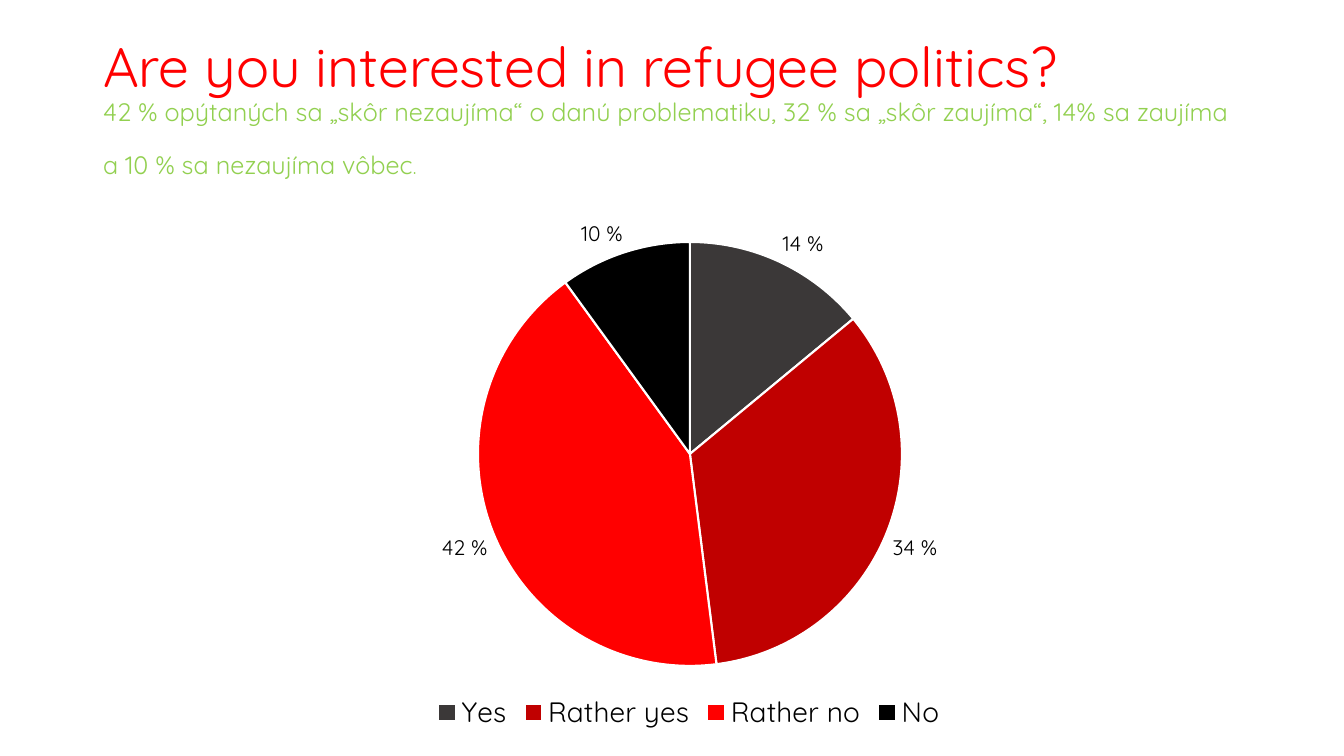
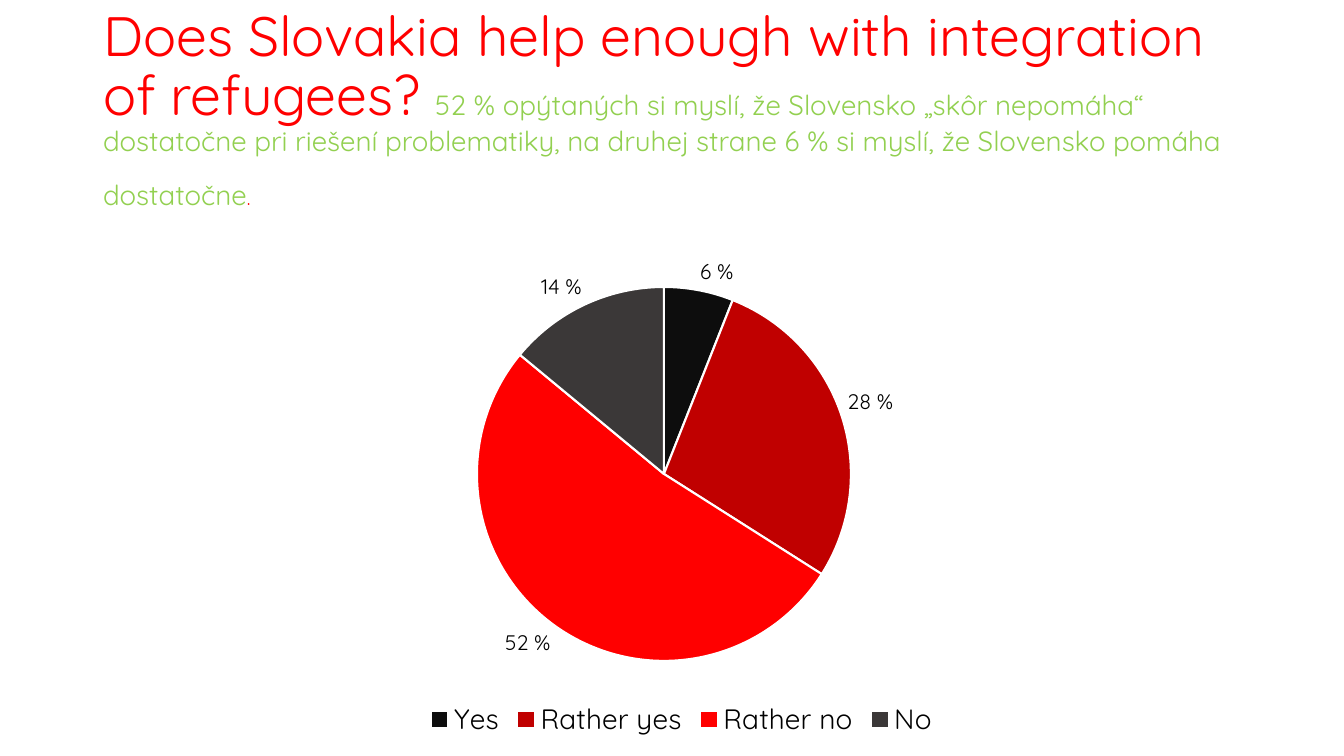
from dataclasses import dataclass

from lxml.etree import SubElement
from pptx import Presentation
from pptx.chart.data import CategoryChartData as ChartData
from pptx.dml.color import RGBColor
from pptx.enum.chart import XL_CHART_TYPE as ChartType
from pptx.enum.chart import XL_LABEL_POSITION as LabelPosition
from pptx.enum.chart import XL_LEGEND_POSITION as LegendPosition
from pptx.enum.text import MSO_ANCHOR as Anchor
from pptx.enum.text import MSO_AUTO_SIZE as AutoSize
from pptx.enum.text import PP_ALIGN as Align
from pptx.oxml.ns import qn
from pptx.util import Pt


@dataclass(frozen=True)
class Theme:
    font: str = "Quicksand"
    base_font: str = "Calibri"
    red: str = "FF0000"
    dark_red: str = "C00000"
    green: str = "92D050"
    gray: str = "3B3838"
    soft_black: str = "0D0D0D"
    black: str = "000000"
    white: str = "FFFFFF"
    question_size: float = 39.6
    stop_size: float = 14.4
    legend_size: int = 20
    label_size: int = 15
    base_size: int = 10
    slice_border: float = 1.5


THEME = Theme()
EMU_PER_PX = 914400 / 100.8
SLIDE_SIZE = (1344, 756)
TITLE_BOX = (93, 40, 1159, 146)
TITLE_ONLY = 5
ANSWERS = ("Yes", "Rather yes", "Rather no", "No")

QUESTIONS = [
    {
        "question": "Are you interested in refugee politics?",
        "break_after": True,
        "summary": "42 % opýtaných sa „skôr nezaujíma“ o danú problematiku, "
                   "32 % sa „skôr zaujíma“, 14% sa zaujíma a 10 % sa nezaujíma vôbec",
        "summary_size": 18,
        "stop_color": THEME.green,
        "values": (14, 34, 42, 10),
        "colors": (THEME.gray, THEME.dark_red, THEME.red, THEME.black),
        "chart_box": (55, 201, 1268, 535),
        "pie_box": (478, 242, 424, 424),
    },
    {
        "question": "Does Slovakia help enough with integration of refugees? ",
        "break_after": False,
        "summary": "52 % opýtaných si myslí, že Slovensko „skôr nepomáha“ "
                   "dostatočne pri riešení problematiky, na druhej strane 6 % si myslí, "
                   "že Slovensko pomáha dostatočne",
        "summary_size": 19.8,
        "stop_color": THEME.red,
        "values": (6, 28, 52, 14),
        "colors": (THEME.soft_black, THEME.dark_red, THEME.red, THEME.gray),
        "chart_box": (40, 242, 1283, 501),
        "pie_box": (477, 287, 374, 374),
    },
]


def emu(*lengths):
    return [round(length * EMU_PER_PX) for length in lengths]


def format_font(font, size, color=THEME.black, name=THEME.font):
    font.size = Pt(size)
    font.name = name
    font.color.rgb = RGBColor.from_string(color)


def add_text(paragraph, text, **style):
    run = paragraph.add_run()
    run.text = text
    format_font(run.font, **style)


def add_line_break(paragraph, size):
    paragraph.add_line_break()
    SubElement(paragraph._p[-1], qn("a:rPr"), sz=str(round(size * 100)))


def fill_title(title, content):
    title.left, title.top, title.width, title.height = emu(*TITLE_BOX)
    frame = title.text_frame
    frame.auto_size = AutoSize.NONE
    frame.word_wrap = True
    frame.vertical_anchor = Anchor.MIDDLE
    paragraph = frame.paragraphs[0]
    paragraph.alignment = Align.LEFT
    paragraph.line_spacing = 0.9
    add_text(paragraph, content["question"], size=THEME.question_size, color=THEME.red)
    if content["break_after"]:
        add_line_break(paragraph, THEME.question_size)
    add_text(paragraph, content["summary"], size=content["summary_size"], color=THEME.green)
    add_text(paragraph, ".", size=THEME.stop_size, color=content["stop_color"])
    add_text(paragraph, " ", size=THEME.question_size, color=content["stop_color"])


def place_pie(chart, chart_box, pie_box):
    left, top, width, height = chart_box
    pie_left, pie_top, pie_width, pie_height = pie_box
    fractions = {
        "x": (pie_left - left) / width,
        "y": (pie_top - top) / height,
        "w": pie_width / width,
        "h": pie_height / height,
    }
    plot_area = chart.element.find(".//" + qn("c:plotArea"))
    for old_layout in plot_area.findall(qn("c:layout")):
        plot_area.remove(old_layout)
    layout = SubElement(plot_area, qn("c:layout"))
    plot_area.insert(0, layout)
    manual = SubElement(layout, qn("c:manualLayout"))
    SubElement(manual, qn("c:layoutTarget"), val="inner")
    for axis in "xy":
        SubElement(manual, qn(f"c:{axis}Mode"), val="edge")
    for key, fraction in fractions.items():
        SubElement(manual, qn(f"c:{key}"), val=f"{fraction:.4f}")


def add_pie(slide, content):
    data = ChartData()
    data.categories = ANSWERS
    data.add_series("Series 1", content["values"])
    frame = slide.shapes.add_chart(ChartType.PIE, *emu(*content["chart_box"]), data)
    chart = frame.chart
    chart.has_title = False
    format_font(chart.font, THEME.base_size, name=THEME.base_font)

    chart.has_legend = True
    chart.legend.position = LegendPosition.BOTTOM
    chart.legend.include_in_layout = False
    format_font(chart.legend.font, THEME.legend_size)

    plot = chart.plots[0]
    plot.vary_by_categories = True
    plot.has_data_labels = True
    labels = plot.data_labels
    labels.show_value = True
    labels.show_percentage = False
    labels.number_format = '0" %"'
    labels.number_format_is_linked = False
    labels.position = LabelPosition.OUTSIDE_END
    format_font(labels.font, THEME.label_size)

    for index, color in enumerate(content["colors"]):
        slice_format = plot.series[0].points[index].format
        slice_format.fill.solid()
        slice_format.fill.fore_color.rgb = RGBColor.from_string(color)
        slice_format.line.width = Pt(THEME.slice_border)
        slice_format.line.color.rgb = RGBColor.from_string(THEME.white)
    place_pie(chart, content["chart_box"], content["pie_box"])


def main():
    presentation = Presentation()
    presentation.slide_width, presentation.slide_height = emu(*SLIDE_SIZE)
    for content in QUESTIONS:
        slide = presentation.slides.add_slide(presentation.slide_layouts[TITLE_ONLY])
        fill_title(slide.shapes.title, content)
        add_pie(slide, content)
    presentation.save("out.pptx")


if __name__ == "__main__":
    main()
